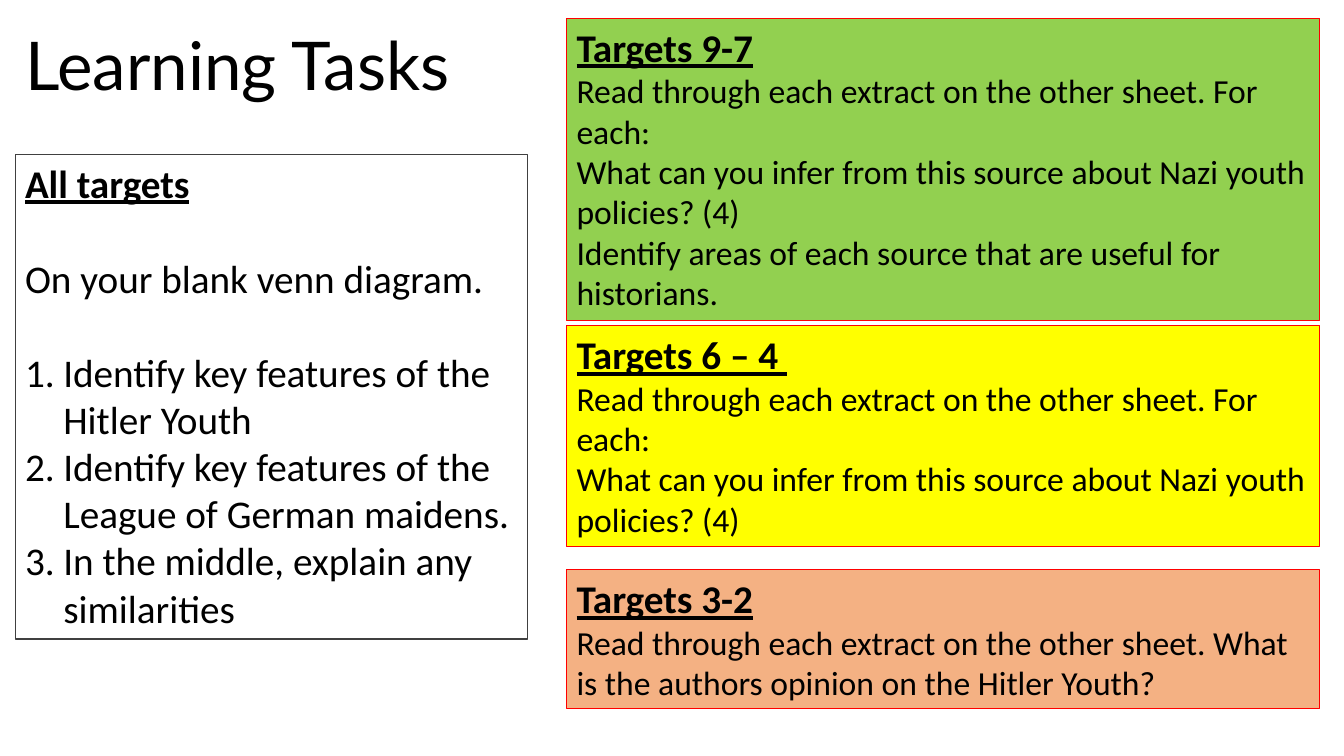
from pptx import Presentation
from pptx.dml.color import RGBColor
from pptx.enum.shapes import MSO_SHAPE
from pptx.enum.text import MSO_ANCHOR, MSO_AUTO_SIZE, PP_ALIGN
from pptx.oxml.ns import qn
from pptx.util import Inches, Pt

RECTANGLE = MSO_SHAPE.RECTANGLE
LEFT = PP_ALIGN.LEFT
TOP = MSO_ANCHOR.TOP
NO_FIT = MSO_AUTO_SIZE.NONE

TITLE = "Learning Tasks"
READ_EACH = "Read through each extract on the other sheet. For each:"
INFER = "What can you infer from this source about Nazi youth policies? (4)"

ALL_TARGETS = {
    "heading": "All targets",
    "intro": "On your blank venn diagram.",
    "steps": [
        "Identify key features of the Hitler Youth",
        "Identify key features of the League of German maidens.",
        "In the middle, explain any similarities",
    ],
}

# heading, fill name, top, height, lines
TARGETS = [
    ("Targets 9-7", "green", 0.18, 3.0,
     [READ_EACH, INFER,
      "Identify areas of each source that are useful for historians."]),
    ("Targets 6 – 4 ", "yellow", 3.23, 2.19, [READ_EACH, INFER]),
    ("Targets 3-2", "orange", 5.65, 1.38,
     ["Read through each extract on the other sheet. What is the authors "
      "opinion on the Hitler Youth?"]),
]

THEME = {
    "title_font": "Lato",
    "body_font": "Calibri",
    "title_size": Pt(48),
    "large_size": Pt(28),
    "small_size": Pt(24),
    "line_width": Pt(0.75),
    "text": RGBColor.from_string("000000"),
    "red": RGBColor.from_string("FF0000"),
    "dark": RGBColor.from_string("404040"),
    "green": RGBColor.from_string("92D050"),
    "yellow": RGBColor.from_string("FFFF00"),
    "orange": RGBColor.from_string("F4B183"),
}

LEFT_MARGIN = 0.15
TARGET_LEFT, TARGET_WIDTH = 5.62, 7.47
STEP_INDENT = Inches(0.38)
SECTION_GAP = Pt(34)


def style_font(font, name, size):
    font.name = name
    font.size = size
    font.color.rgb = THEME["text"]


def add_box(slide, left, top, width, height, heading, line, fill=None):
    """Add an outlined box with an underlined heading; return its text frame."""
    box = slide.shapes.add_shape(
        RECTANGLE, Inches(left), Inches(top), Inches(width), Inches(height))
    box.shadow.inherit = False
    box.line.color.rgb = THEME[line]
    box.line.width = THEME["line_width"]
    if fill:
        box.fill.solid()
        box.fill.fore_color.rgb = THEME[fill]
    else:
        box.fill.background()
    text_frame = box.text_frame
    text_frame.word_wrap = True
    text_frame.vertical_anchor = TOP
    paragraph = text_frame.paragraphs[0]
    write(paragraph, heading, THEME["large_size"])
    paragraph.font.bold = True
    paragraph.font.underline = True
    return text_frame


def write(paragraph, text, size):
    paragraph.text = text
    paragraph.alignment = LEFT
    style_font(paragraph.font, THEME["body_font"], size)


def number(paragraph):
    properties = paragraph._p.get_or_add_pPr()
    properties.set("marL", str(STEP_INDENT))
    properties.set("indent", str(-STEP_INDENT))
    bullet = properties.makeelement(qn("a:buAutoNum"), {"type": "arabicPeriod"})
    properties.find(qn("a:defRPr")).addprevious(bullet)


def add_title(slide):
    title = slide.shapes.title
    title.left, title.top = Inches(LEFT_MARGIN), Inches(0.18)
    title.width, title.height = Inches(6.54), Inches(0.91)
    title.text_frame.auto_size = NO_FIT
    title.text_frame.vertical_anchor = TOP
    paragraph = title.text_frame.paragraphs[0]
    paragraph.text = TITLE
    paragraph.alignment = LEFT
    style_font(paragraph.font, THEME["title_font"], THEME["title_size"])


def add_all_targets(slide):
    text_frame = add_box(slide, LEFT_MARGIN, 1.53, 5.08, 4.81,
                         ALL_TARGETS["heading"], "dark")
    intro = text_frame.add_paragraph()
    write(intro, ALL_TARGETS["intro"], THEME["large_size"])
    intro.space_before = intro.space_after = SECTION_GAP
    for step in ALL_TARGETS["steps"]:
        paragraph = text_frame.add_paragraph()
        write(paragraph, step, THEME["large_size"])
        number(paragraph)


def add_targets(slide):
    for heading, fill, top, height, lines in TARGETS:
        text_frame = add_box(slide, TARGET_LEFT, top, TARGET_WIDTH, height,
                             heading, "red", fill)
        for line in lines:
            write(text_frame.add_paragraph(), line, THEME["small_size"])


def main():
    presentation = Presentation()
    presentation.slide_width = Inches(13.33)
    presentation.slide_height = Inches(7.5)
    slide = presentation.slides.add_slide(presentation.slide_layouts[5])
    add_title(slide)
    add_all_targets(slide)
    add_targets(slide)
    presentation.save("out.pptx")


if __name__ == "__main__":
    main()
